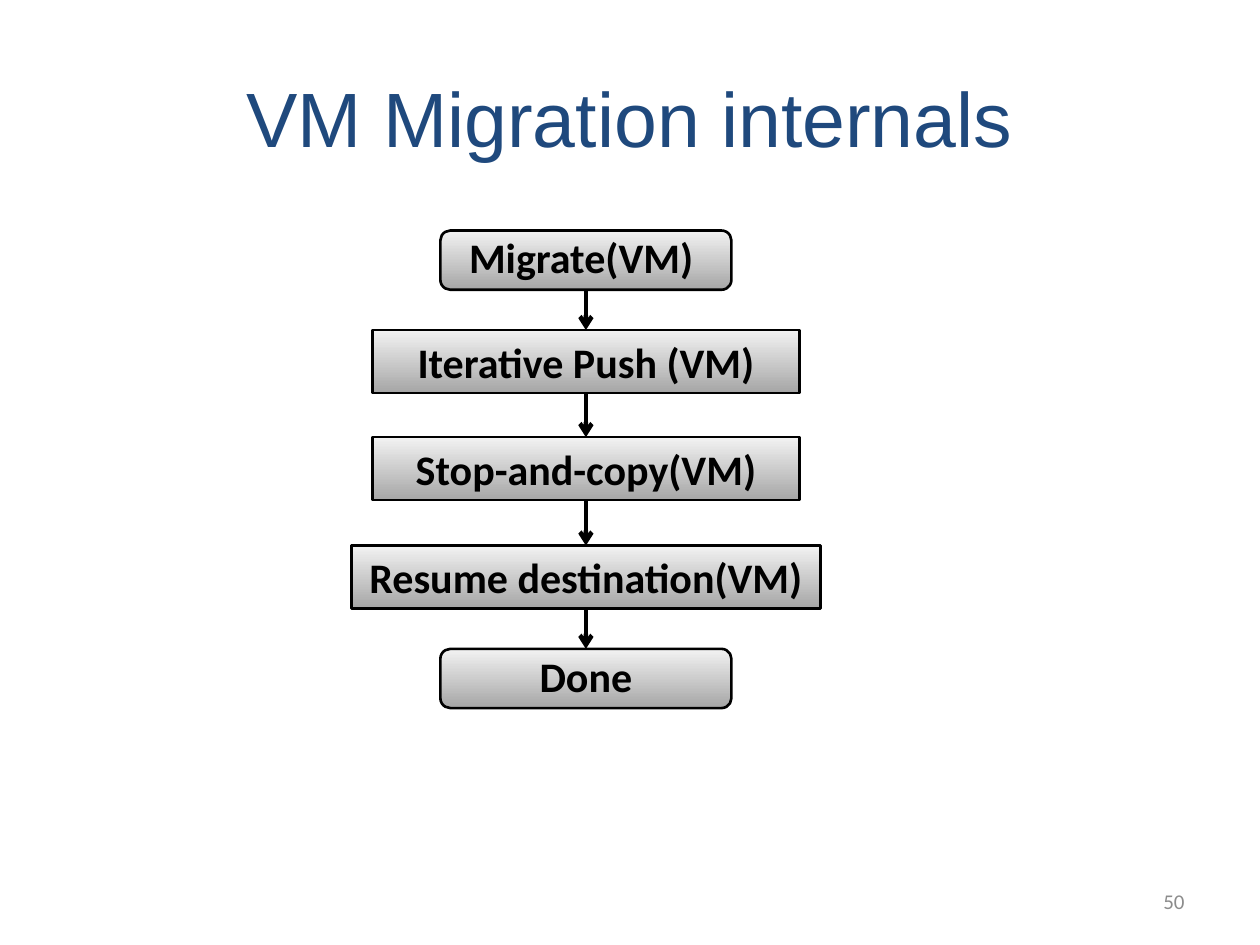
from itertools import pairwise

from lxml.etree import SubElement
from pptx import Presentation
from pptx.dml.color import RGBColor
from pptx.enum.shapes import MSO_CONNECTOR, MSO_SHAPE
from pptx.enum.text import MSO_ANCHOR, PP_ALIGN
from pptx.oxml.ns import qn
from pptx.util import Inches, Pt

COLORS = {
    "title": "1F497D",
    "number": "8C8C8C",
    "ink": "000000",
    "dark": "A6A6A6",
    "light": "F2F2F2",
}
CENTER = 4.65
TOP_SITE, BOTTOM_SITE = 0, 2
TERMINAL = MSO_SHAPE.FLOWCHART_ALTERNATE_PROCESS
PROCESS = MSO_SHAPE.FLOWCHART_PROCESS

# text, shape, top, width, height
STEPS = [
    ("Migrate(VM) ", TERMINAL, 1.83, 2.31, 0.47),
    ("Iterative Push (VM)", PROCESS, 2.62, 3.39, 0.5),
    ("Stop-and-copy(VM)", PROCESS, 3.47, 3.39, 0.5),
    ("Resume destination(VM)", PROCESS, 4.33, 3.72, 0.5),
    ("Done", TERMINAL, 5.15, 2.31, 0.47),
]


def color(name):
    return RGBColor.from_string(COLORS[name])


def write_text(shape, text, size, font, color_name, align, bold=False):
    frame = shape.text_frame
    frame.word_wrap = True
    frame.vertical_anchor = MSO_ANCHOR.MIDDLE
    para = frame.paragraphs[0]
    para.alignment = align
    span = para.add_run()
    span.text = text
    span.font.size = Pt(size)
    span.font.name = font
    span.font.bold = bold
    span.font.color.rgb = color(color_name)


def add_label(page, area, *text_style):
    box = page.shapes.add_textbox(*map(Inches, area))
    write_text(box, *text_style)


def add_step(page, text, kind, top, width, height):
    """Add a flowchart box centred on the flow's vertical axis."""
    left = CENTER - width / 2
    step = page.shapes.add_shape(kind, *map(Inches, (left, top, width, height)))
    step.shadow.inherit = False
    step.fill.gradient()
    step.fill.gradient_angle = 90
    for stop, name in zip(step.fill.gradient_stops, ("dark", "light")):
        stop.color.rgb = color(name)
    step.line.color.rgb = color("ink")
    step.line.width = Pt(1.5)
    write_text(step, text, 24, "Calibri", "ink", PP_ALIGN.CENTER, bold=True)
    if kind == TERMINAL:
        step.text_frame.margin_bottom = Inches(0.1)
    return step


def add_arrow(page, upper, lower):
    arrow = page.shapes.add_connector(MSO_CONNECTOR.STRAIGHT, 0, 0, 0, 0)
    arrow.begin_connect(upper, BOTTOM_SITE)
    arrow.end_connect(lower, TOP_SITE)
    arrow.line.color.rgb = color("ink")
    arrow.line.width = Pt(2.5)
    SubElement(arrow.line._get_or_add_ln(), qn("a:tailEnd"), type="arrow")
    SubElement(arrow._element.spPr, qn("a:effectLst"))


def main():
    deck = Presentation()
    deck.slide_width, deck.slide_height = Inches(10), Inches(7.5)
    page = deck.slides.add_slide(deck.slide_layouts[6])
    add_label(page, (0.5, 0.3, 9, 1.25), "VM Migration internals",
              44, "Arial", "title", PP_ALIGN.CENTER)
    steps = [add_step(page, *step) for step in STEPS]
    for upper, lower in pairwise(steps):
        add_arrow(page, upper, lower)
    add_label(page, (7.17, 6.95, 2.33, 0.4), "50",
              12, "Calibri", "number", PP_ALIGN.RIGHT)
    deck.save("out.pptx")


if __name__ == "__main__":
    main()
